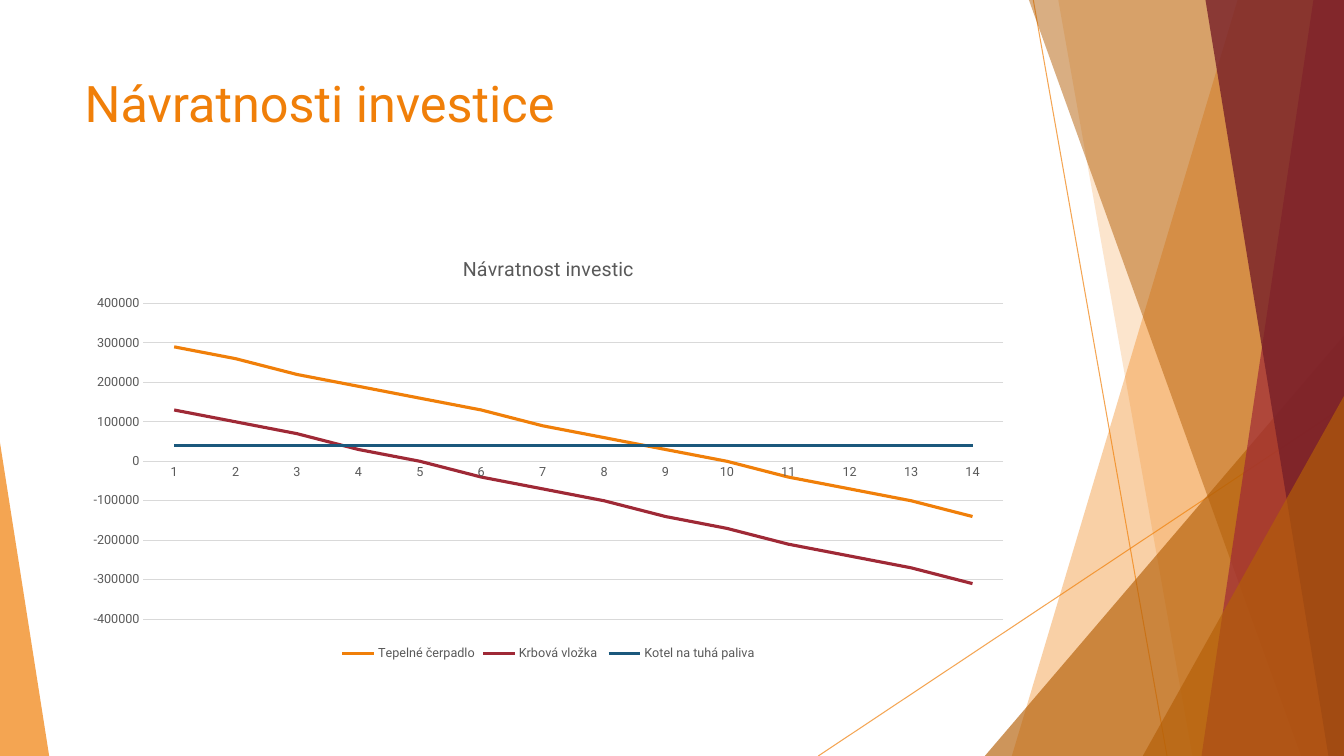
"""Build the slide on return on investment with a line chart and a faceted border."""
from lxml import etree
from pptx import Presentation
from pptx.chart.data import CategoryChartData
from pptx.dml.color import RGBColor
from pptx.enum.chart import XL_CHART_TYPE, XL_LEGEND_POSITION, XL_TICK_MARK
from pptx.enum.shapes import MSO_CONNECTOR, MSO_SHAPE
from pptx.enum.text import MSO_ANCHOR, PP_ALIGN
from pptx.oxml.ns import qn
from pptx.util import Cm, Pt

LINE_CHART = XL_CHART_TYPE.LINE
BOTTOM = XL_LEGEND_POSITION.BOTTOM
NO_TICK = XL_TICK_MARK.NONE
STRAIGHT = MSO_CONNECTOR.STRAIGHT
TRIANGLE = MSO_SHAPE.ISOSCELES_TRIANGLE
TOP = MSO_ANCHOR.TOP
LEFT = PP_ALIGN.LEFT

FONT = "Roboto"
ORANGE, BROWN, RED, WINE, BLUE = "F07F09", "B45F07", "9F2936", "771F28", "1B587C"
GREY, PALE = "595959", "D9D9D9"
WIDTH, HEIGHT = 33.87, 19.05

HEADING = "Návratnosti investice"
CHART_HEADING = "Návratnost investic"
YEARS = [str(year) for year in range(1, 15)]
INVESTMENTS = [
    ("Tepelné čerpadlo", ORANGE,
     [290000, 260000, 220000, 190000, 160000, 130000, 90000,
      60000, 30000, 0, -40000, -70000, -100000, -140000]),
    ("Krbová vložka ", RED,
     [130000, 100000, 70000, 30000, 0, -40000, -70000,
      -100000, -140000, -170000, -210000, -240000, -270000, -310000]),
    ("Kotel na tuhá paliva", BLUE, [40000] * len(YEARS)),
]

HEADING_BOX = (1.88, 1.7, 23.88, 3.66)
CHART_BOX = (1.88, 5.99, 23.88, 10.77)
RAYS = [(26.04, 0, 29.41, HEIGHT), (WIDTH, 10.24, 20.62, HEIGHT)]
FACETS = [
    ("band", (31.19, 25.5), ORANGE, 36),
    ("band", (26.67, 30.05), ORANGE, 20),
    ("peak", (24.82, 8.46, WIDTH, 1), BROWN, 66),
    ("band", (25.93, 32.79), BROWN, 50),
    ("band", (33.1, 30.28), RED, 70),
    ("band", (30.38, 33.48), WINE, 80),
    ("peak", (28.8, 9.98, WIDTH, 1), BROWN, 66),
    ("peak", (0, 11.15, 1.24, 0), ORANGE, 70),
]


def color(value):
    return RGBColor.from_string(value)


def lengths(values):
    return [Cm(value) for value in values]


def set_font(font, size, value):
    formats = {"name": FONT, "size": Pt(size), "bold": False}
    for key, setting in formats.items():
        setattr(font, key, setting)
    font.color.rgb = color(value)


def set_line(line, value, width):
    line.color.rgb = color(value)
    line.width = Pt(width)


def set_opacity(shape, percent):
    tint = next(shape._element.spPr.iter(qn("a:srgbClr")))
    etree.SubElement(tint, qn("a:alpha")).set("val", str(percent * 1000))


def add_ray(shapes, ends):
    ray = shapes.add_connector(STRAIGHT, *lengths(ends))
    set_line(ray.line, ORANGE, 0.75)
    set_opacity(ray, 70)
    etree.SubElement(ray._element.spPr, qn("a:effectLst"))


def add_band(shapes, top_x, bottom_x):
    outline = shapes.build_freeform(Cm(top_x), 0)
    corners = [(WIDTH, 0), (WIDTH, HEIGHT), (bottom_x, HEIGHT)]
    outline.add_line_segments([lengths(corner) for corner in corners])
    return outline.convert_to_shape()


def add_peak(shapes, left, top, right, apex):
    box = lengths((left, top, right - left, HEIGHT - top))
    peak = shapes.add_shape(TRIANGLE, *box)
    peak.adjustments[0] = apex
    return peak


def add_facet(shapes, kind, place, value, percent):
    facet = {"band": add_band, "peak": add_peak}[kind](shapes, *place)
    facet.shadow.inherit = False
    facet.fill.solid()
    facet.fill.fore_color.rgb = color(value)
    set_opacity(facet, percent)
    facet.line.fill.background()


def add_heading(shapes):
    heading = shapes.title
    for key, length in zip(("left", "top", "width", "height"), lengths(HEADING_BOX)):
        setattr(heading, key, length)
    frame = heading.text_frame
    frame.text = HEADING
    frame.vertical_anchor = TOP
    frame.paragraphs[0].alignment = LEFT
    set_font(frame.paragraphs[0].runs[0].font, 36, ORANGE)


def add_returns(shapes):
    data = CategoryChartData()
    data.categories = YEARS
    for name, _, values in INVESTMENTS:
        data.add_series(name, values)
    chart = shapes.add_chart(LINE_CHART, *lengths(CHART_BOX), data).chart
    set_font(chart.font, 10, "000000")

    chart.has_title = True
    chart.chart_title.include_in_layout = False
    chart.chart_title.text_frame.text = CHART_HEADING
    set_font(chart.chart_title.text_frame.paragraphs[0].runs[0].font, 14, GREY)

    chart.has_legend = True
    chart.legend.position = BOTTOM
    chart.legend.include_in_layout = False
    set_font(chart.legend.font, 9, GREY)

    years, amounts = chart.category_axis, chart.value_axis
    for axis in (years, amounts):
        axis.major_tick_mark = axis.minor_tick_mark = NO_TICK
        set_font(axis.tick_labels.font, 9, GREY)
    set_line(years.format.line, PALE, 0.75)
    amounts.format.line.fill.background()
    scale = {"minimum_scale": -400000, "maximum_scale": 400000,
             "major_unit": 100000, "has_major_gridlines": True}
    for key, setting in scale.items():
        setattr(amounts, key, setting)
    set_line(amounts.major_gridlines.format.line, PALE, 0.75)

    chart.plots[0].vary_by_categories = False
    for series, (_, value, _) in zip(chart.plots[0].series, INVESTMENTS):
        series.smooth = False
        set_line(series.format.line, value, 2.25)


def main():
    deck = Presentation()
    deck.slide_width, deck.slide_height = lengths((WIDTH, HEIGHT))
    shapes = deck.slides.add_slide(deck.slide_layouts[5]).shapes
    for ends in RAYS:
        add_ray(shapes, ends)
    for facet in FACETS:
        add_facet(shapes, *facet)
    add_heading(shapes)
    add_returns(shapes)
    deck.save("out.pptx")


if __name__ == "__main__":
    main()
